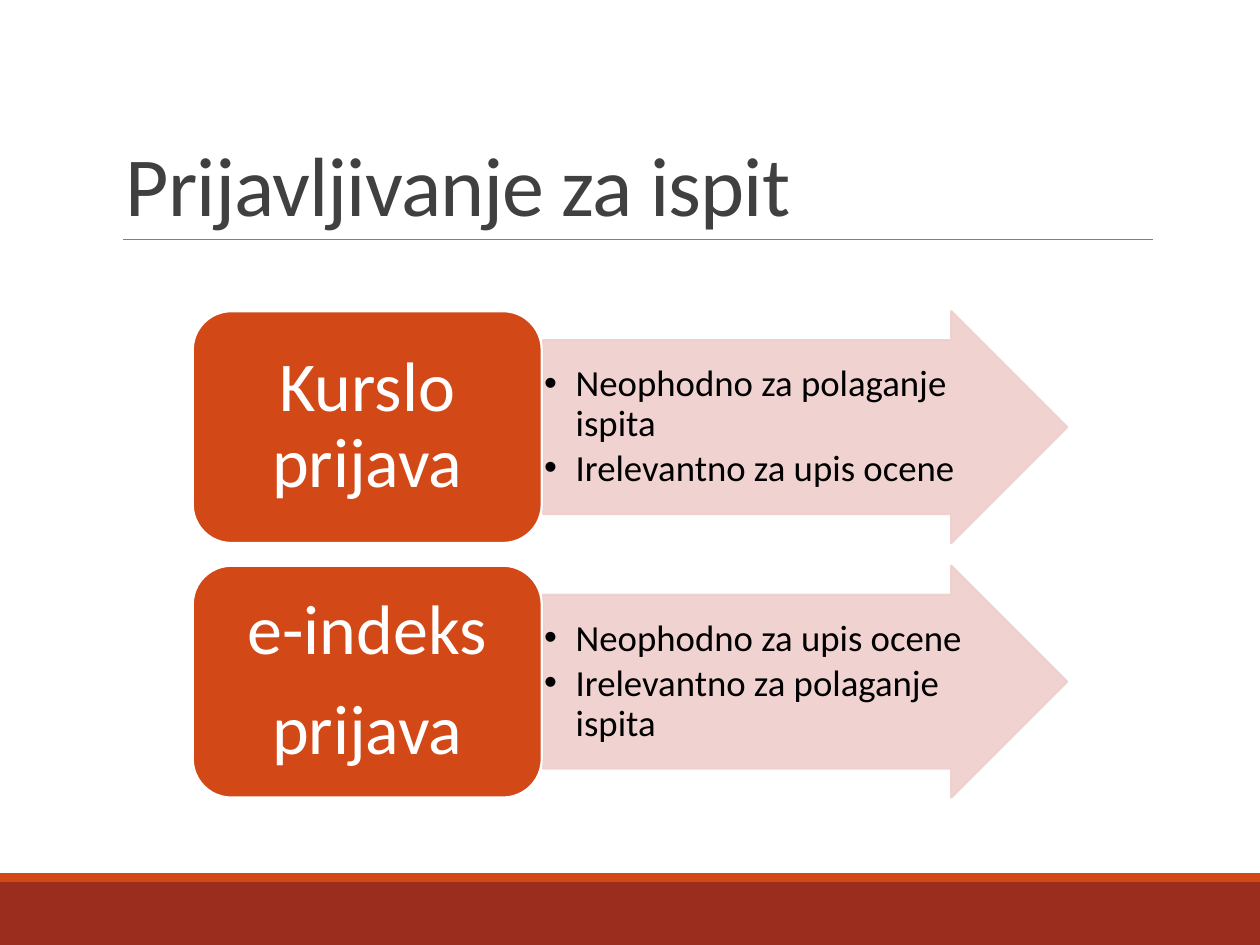
import pptx
import pptx.dml.color
import pptx.enum.shapes
import pptx.enum.text
import pptx.oxml.ns
import pptx.util
from lxml import etree

Inches = pptx.util.Inches
Pt = pptx.util.Pt
SHAPES = pptx.enum.shapes.MSO_SHAPE
ANCHOR = pptx.enum.text.MSO_ANCHOR
ALIGN = pptx.enum.text.PP_ALIGN
qn = pptx.oxml.ns.qn

COLORS = {
    "title": "404040",
    "rule": "808080",
    "band": "9B2D1F",
    "accent": "D34817",
    "arrow": "EFCFCC",
    "white": "FFFFFF",
    "body": "000000",
}

# Label paragraphs and bullet points of each row
ROWS = [
    (["Kurslo prijava"],
     ["Neophodno za polaganje ispita", "Irelevantno za upis ocene"]),
    (["e-indeks", "prijava"],
     ["Neophodno za upis ocene", "Irelevantno za polaganje ispita"]),
]
ROW_TOP, ROW_PITCH, ROW_HEIGHT = 2.47, 2.02, 1.84
LABEL_LEFT, LABEL_WIDTH, LABEL_MARGIN = 1.53, 2.77, 0.09
ARROW_LEFT, ARROW_WIDTH = 4.31, 4.16


def color(name):
    return pptx.dml.color.RGBColor.from_string(COLORS[name])


class SlideBuilder:
    def __init__(self, slide, font="Calibri"):
        self.slide = slide
        self.font = font

    def shape(self, kind, left, top, width, height, fill, line=None, opacity=None):
        shape = self.slide.shapes.add_shape(
            kind, Inches(left), Inches(top), Inches(width), Inches(height))
        shape.shadow.inherit = False
        shape.fill.solid()
        shape.fill.fore_color.rgb = color(fill)
        if line:
            shape.line.color.rgb = color(line)
            shape.line.width = Pt(1.25)
        else:
            shape.line.fill.background()
        if opacity:
            for paint in shape._element.spPr.iter(qn("a:srgbClr")):
                etree.SubElement(paint, qn("a:alpha"), val=str(opacity * 1000))
        return shape

    def rule(self, left, top, right):
        line = self.slide.shapes.add_connector(
            pptx.enum.shapes.MSO_CONNECTOR.STRAIGHT,
            Inches(left), Inches(top), Inches(right), Inches(top))
        line.line.color.rgb = color("rule")
        line.line.width = Pt(0.5)
        etree.SubElement(line._element.spPr, qn("a:effectLst"))

    def text(self, left, top, width, height, lines, size, fill, anchor=ANCHOR.MIDDLE,
             align=ALIGN.LEFT, insets=(0.1, 0.05), spacing=0.9, after=0,
             bullet=False, tracking=None):
        """Insets are (horizontal, vertical) inches; tracking is in points."""
        box = self.slide.shapes.add_textbox(
            Inches(left), Inches(top), Inches(width), Inches(height))
        frame = box.text_frame
        frame.word_wrap = True
        frame.vertical_anchor = anchor
        frame.margin_left = frame.margin_right = Inches(insets[0])
        frame.margin_top = frame.margin_bottom = Inches(insets[1])
        for index, line in enumerate(lines):
            para = frame.add_paragraph() if index else frame.paragraphs[0]
            span = para.add_run()
            span.text = line
            para.alignment = align
            para.line_spacing = spacing
            para.space_after = Pt(after)
            if bullet:
                self.bullet(para)
            para.font.name = self.font
            para.font.size = Pt(size)
            para.font.color.rgb = color(fill)
            if tracking:
                span._r.get_or_add_rPr().set("spc", str(int(tracking * 100)))

    def bullet(self, para, indent=0.25):
        properties = para._p.get_or_add_pPr()
        properties.set("marL", str(Inches(indent)))
        properties.set("indent", str(-Inches(indent)))
        etree.SubElement(properties, qn("a:buFont"), typeface="Arial")
        etree.SubElement(properties, qn("a:buChar"), char="•")

    def row(self, top, label, points):
        arrow = self.shape(SHAPES.RIGHT_ARROW, ARROW_LEFT, top, ARROW_WIDTH, ROW_HEIGHT,
                           "arrow", line="arrow", opacity=90)
        arrow.adjustments[0] = 0.75
        arrow.adjustments[1] = 0.5
        self.text(ARROW_LEFT, top + ROW_HEIGHT / 8, 3.47, ROW_HEIGHT * 0.75, points,
                  21, "body", insets=(0.01, 0.01), after=3.15, bullet=True)
        self.shape(SHAPES.ROUNDED_RECTANGLE, LABEL_LEFT, top, LABEL_WIDTH, ROW_HEIGHT,
                   "accent", line="white")
        self.text(LABEL_LEFT + LABEL_MARGIN, top + LABEL_MARGIN,
                  LABEL_WIDTH - 2 * LABEL_MARGIN, ROW_HEIGHT - 2 * LABEL_MARGIN,
                  label, 40, "white", align=ALIGN.CENTER, insets=(0.17, 0.08), after=14)


def main():
    deck = pptx.Presentation()
    deck.slide_width = Inches(10)
    deck.slide_height = Inches(7.5)
    page = SlideBuilder(deck.slides.add_slide(deck.slide_layouts[6]))

    page.shape(SHAPES.RECTANGLE, 0, 7, 10, 0.5, "band")
    page.shape(SHAPES.RECTANGLE, 0, 6.93, 10, 0.07, "accent")
    page.rule(0.98, 1.9, 9.15)
    page.text(0.9, 0.31, 8.25, 1.59, ["Prijavljivanje za ispit"], 48, "title",
              anchor=ANCHOR.BOTTOM, spacing=0.85, tracking=-0.5)
    for index, (label, points) in enumerate(ROWS):
        page.row(ROW_TOP + index * ROW_PITCH, label, points)

    deck.save("out.pptx")


if __name__ == "__main__":
    main()
